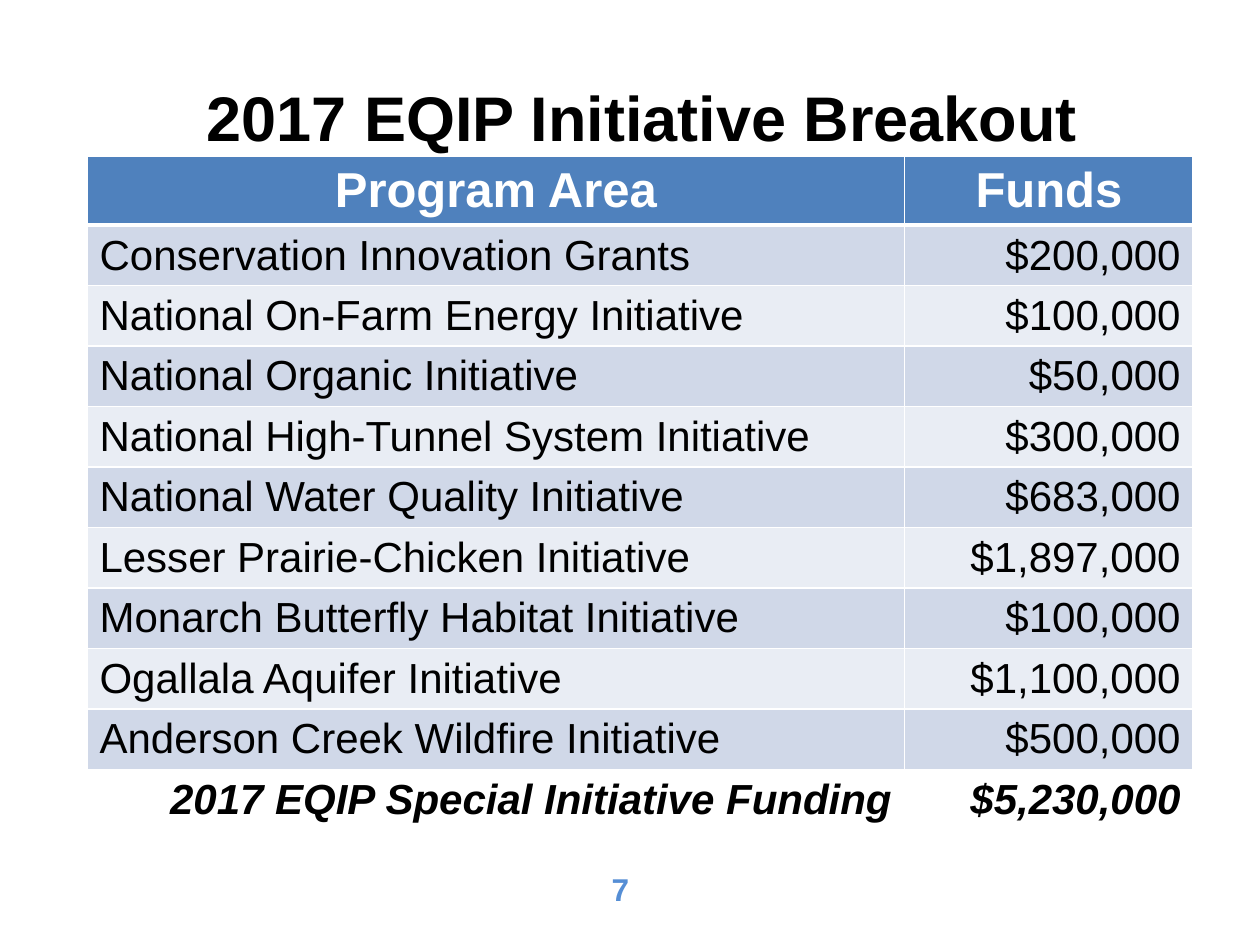
from lxml.etree import SubElement
from pptx import Presentation
from pptx.dml.color import RGBColor
from pptx.enum.text import MSO_ANCHOR as Anchor, PP_ALIGN as Align
from pptx.oxml.ns import qn
from pptx.util import Inches, Pt

UNIT = 0.25  # grid of 40 columns by 30 rows
WHITE, BLACK, BLUE = "FFFFFF", "000000", "4F81BD"
BANDS = ("D0D8E8", "E9EDF4")

INITIATIVES = [
    ("Conservation Innovation Grants", "$200,000"),
    ("National On-Farm Energy Initiative", "$100,000"),
    ("National Organic Initiative", "$50,000"),
    ("National High-Tunnel System Initiative", "$300,000"),
    ("National Water Quality Initiative", "$683,000"),
    ("Lesser Prairie-Chicken Initiative", "$1,897,000"),
    ("Monarch Butterfly Habitat Initiative", "$100,000"),
    ("Ogallala Aquifer Initiative", "$1,100,000"),
    ("Anderson Creek Wildfire Initiative", "$500,000"),
]


def grid(units):
    return Inches(units * UNIT)


def color(code):
    return RGBColor.from_string(code)


class SlideBuilder:
    font = "Arial"

    def __init__(self, page):
        self.page = page

    def set_text(self, frame, text, size, ink, align, bold=False, italic=False):
        frame.text = text
        para = frame.paragraphs[0]
        para.alignment = align
        for span in para.runs:
            font = span.font
            font.name, font.size = self.font, Pt(size)
            font.bold, font.italic = bold, italic
            font.color.rgb = color(ink)

    def title(self, text, left, top, width, height):
        box = self.page.shapes.title
        box.left, box.top = grid(left), grid(top)
        box.width, box.height = grid(width), grid(height)
        box.text_frame.vertical_anchor = Anchor.MIDDLE
        self.set_text(box.text_frame, text, 36, BLACK, Align.CENTER, bold=True)

    def label(self, text, left, top, width, height, size, ink):
        box = self.page.shapes.add_textbox(
            grid(left), grid(top), grid(width), grid(height))
        box.text_frame.word_wrap = True
        self.set_text(box.text_frame, text, size, ink, Align.CENTER, bold=True)

    def table(self, left, top, widths, heights):
        table = self.page.shapes.add_table(
            len(heights), len(widths), grid(left), grid(top),
            grid(sum(widths)), grid(sum(heights))).table
        for column, width in zip(table.columns, widths):
            column.width = grid(width)
        for row, height in zip(table.rows, heights):
            row.height = grid(height)
        return table

    def row(self, cells, texts, aligns, fill, size=24, ink=BLACK,
            bold=False, italic=False, top_rule=1, bottom_rule=1):
        for cell, text, align in zip(cells, texts, aligns):
            self.set_text(cell.text_frame, text, size, ink, align, bold, italic)
            cell.vertical_anchor = Anchor.MIDDLE
            cell.margin_top = cell.margin_bottom = Inches(0.04)
            self.borders(cell, top_rule, bottom_rule)
            cell.fill.solid()
            cell.fill.fore_color.rgb = color(fill)

    def borders(self, cell, top_rule, bottom_rule):
        properties = cell._tc.get_or_add_tcPr()
        rules = {"L": 1, "R": 1, "T": top_rule, "B": bottom_rule}
        for side, width in rules.items():
            line = SubElement(properties, qn(f"a:ln{side}"), w=str(Pt(width)))
            solid = SubElement(line, qn("a:solidFill"))
            SubElement(solid, qn("a:srgbClr"), val=WHITE)


def main():
    deck = Presentation()
    deck.slide_width, deck.slide_height = Inches(10), Inches(7.5)
    builder = SlideBuilder(deck.slides.add_slide(deck.slide_layouts[5]))

    # Page number and title
    builder.label("7", 17.24, 27.44, 4.92, 1.6, 18, "558ED5")
    builder.title("2017 EQIP Initiative Breakout", 2.76, 1.2, 35.24, 5)

    # Funding table: header, banded rows, total
    heights = [2.12] + [1.89] * (len(INITIATIVES) + 1)
    table = builder.table(2.76, 4.96, (25.96, 9.16), heights)
    header, *body, total = [row.cells for row in table.rows]
    builder.row(header, ("Program Area", "Funds"), (Align.CENTER,) * 2, BLUE,
                size=28, ink=WHITE, bold=True, bottom_rule=3)
    for index, (cells, texts) in enumerate(zip(body, INITIATIVES)):
        builder.row(cells, texts, (Align.LEFT, Align.RIGHT), BANDS[index % 2],
                    top_rule=1 if index else 3)
    builder.row(total, ("2017 EQIP Special Initiative Funding", "$5,230,000"),
                (Align.RIGHT,) * 2, WHITE, bold=True, italic=True)

    deck.save("out.pptx")


if __name__ == "__main__":
    main()
